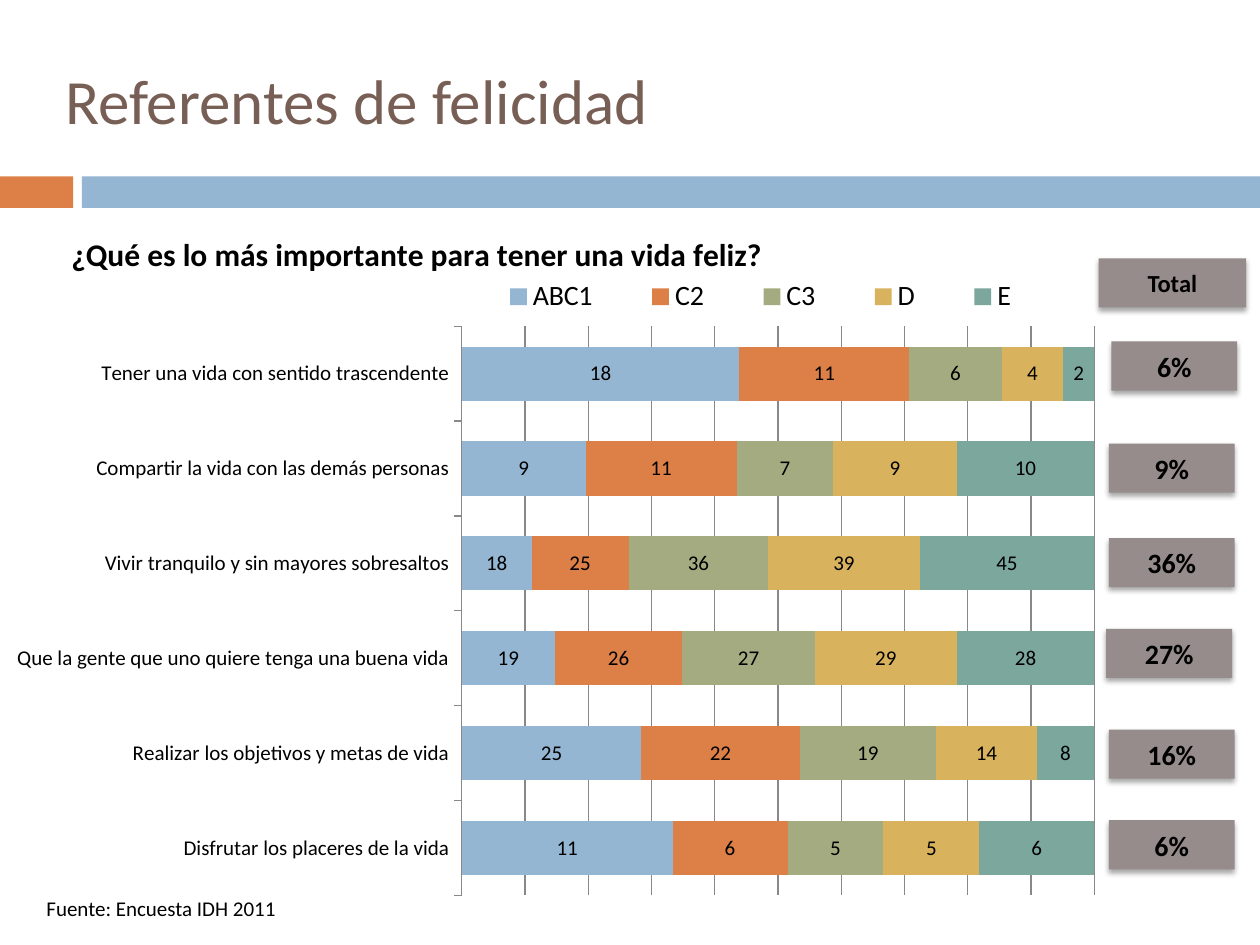
from dataclasses import dataclass

from lxml.etree import SubElement
from pptx import Presentation
from pptx.chart.data import CategoryChartData
from pptx.dml.color import RGBColor
from pptx.enum.chart import XL_CHART_TYPE, XL_LEGEND_POSITION, XL_TICK_MARK
from pptx.enum.shapes import MSO_SHAPE
from pptx.enum.text import MSO_ANCHOR, PP_ALIGN
from pptx.oxml import parse_xml
from pptx.oxml.ns import nsdecls, qn
from pptx.util import Inches, Pt


@dataclass(frozen=True)
class Theme:
    font: str = "Calibri"
    ink: str = "000000"
    brown: str = "775F55"
    grey: str = "968C8C"
    grid: str = "888888"
    blue: str = "94B6D2"
    orange: str = "DD8047"
    green: str = "A5AB81"
    gold: str = "D8B25C"
    teal: str = "7BA79D"
    head: int = 36
    lead: int = 18
    mid: int = 16
    tag: int = 14
    small: int = 12


THEME = Theme()
CATS = [
    "Disfrutar los placeres de la vida",
    "Realizar los objetivos y metas de vida",
    "Que la gente que uno quiere tenga una buena vida",
    "Vivir tranquilo y sin mayores sobresaltos",
    "Compartir la vida con las demás personas",
    "Tener una vida con sentido trascendente",
]
GROUPS = [
    ("ABC1", THEME.blue, (11, 25, 19, 18, 9, 18)),
    ("C2", THEME.orange, (6, 22, 26, 25, 11, 11)),
    ("C3", THEME.green, (5, 19, 27, 36, 7, 6)),
    ("D", THEME.gold, (5, 14, 29, 39, 9, 4)),
    ("E", THEME.teal, (6, 8, 28, 45, 10, 2)),
]
TOTALS = [
    (8.82, 2.71, "6%"),
    (8.8, 3.52, "9%"),
    (8.8, 4.27, "36%"),
    (8.78, 4.99, "27%"),
    (8.8, 5.79, "16%"),
    (8.8, 6.51, "6%"),
]


def place(box):
    return [Inches(side) for side in box]


def style(font, size, color=THEME.ink, bold=False):
    font.name = THEME.font
    font.size = Pt(size)
    font.bold = bold
    font.color.rgb = RGBColor.from_string(color)


def write(frame, text, align=PP_ALIGN.LEFT, **look):
    para = frame.paragraphs[0]
    para.alignment = align
    run = para.add_run()
    run.text = text
    style(run.font, **look)


def block(slide, box, color):
    shape = slide.shapes.add_shape(MSO_SHAPE.RECTANGLE, *place(box))
    shape.shadow.inherit = False
    shape.fill.solid()
    shape.fill.fore_color.rgb = RGBColor.from_string(color)
    shape.line.fill.background()
    return shape


def label(slide, box, text, wrap=True, **look):
    frame = slide.shapes.add_textbox(*place(box)).text_frame
    frame.word_wrap = wrap
    write(frame, text, **look)


def band(slide, box):
    left, top, width, height = box
    start = left + 0.65
    block(slide, (left, top, 0.58, height), THEME.orange)
    block(slide, (start, top, width - start, height), THEME.blue)


def badge(slide, box, text, size):
    shape = block(slide, box, THEME.grey)
    effects = shape.element.spPr.find(qn("a:effectLst"))
    effects.append(parse_xml(
        f'<a:outerShdw {nsdecls("a")} blurRad="{Pt(3)}" dist="{Pt(2)}" '
        'dir="5400000" rotWithShape="0"><a:srgbClr val="000000">'
        '<a:alpha val="35000"/></a:srgbClr></a:outerShdw>'
    ))
    frame = shape.text_frame
    frame.vertical_anchor = MSO_ANCHOR.MIDDLE
    write(frame, text, align=PP_ALIGN.CENTER, size=size, bold=True)


def totals(slide, box):
    badge(slide, box, "Total", THEME.tag)
    for left, top, text in TOTALS:
        badge(slide, (left, top, 1, box[3]), text, THEME.mid)


def arrange(part, index, inner=False, **sides):
    old = part.find(qn("c:layout"))
    if old is not None:
        part.remove(old)
    layout = parse_xml(f'<c:layout {nsdecls("c")}><c:manualLayout/></c:layout>')
    manual = layout[0]
    if inner:
        SubElement(manual, qn("c:layoutTarget")).set("val", "inner")
    for side in "xy":
        SubElement(manual, qn(f"c:{side}Mode")).set("val", "edge")
    for side, value in sides.items():
        SubElement(manual, qn(f"c:{side}")).set("val", str(value))
    part.insert(index, layout)


def bars(slide, box):
    data = CategoryChartData(number_format="0")
    data.categories = CATS
    for name, _, values in GROUPS:
        data.add_series(name, values)
    chart = slide.shapes.add_chart(
        XL_CHART_TYPE.BAR_STACKED_100, *place(box), data
    ).chart
    style(chart.font, THEME.small)

    chart.has_title = True
    title = chart.chart_title
    write(title.text_frame, "¿Qué es lo más importante para tener una vida feliz?",
          size=THEME.lead, bold=True)
    arrange(title.text_frame._txBody.getparent().getparent(), 1, x=0.06, y=0.03)

    chart.has_legend = True
    legend = chart.legend
    legend.position = XL_LEGEND_POSITION.TOP
    legend.include_in_layout = False
    style(legend.font, THEME.mid)
    root = chart.element.find(qn("c:chart"))
    arrange(root.find(qn("c:legend")), 1, x=0.42, y=0.09, w=0.55, h=0.07)
    arrange(root.find(qn("c:plotArea")), 0, inner=True,
            x=0.422, y=0.165, w=0.578, h=0.768)

    plot = chart.plots[0]
    plot.gap_width = 75
    plot.overlap = 100
    plot.vary_by_categories = False
    for series, (_, color, _) in zip(plot.series, GROUPS):
        series.format.fill.solid()
        series.format.fill.fore_color.rgb = RGBColor.from_string(color)
        tags = series.data_labels
        tags.show_value = True
        tags.number_format = "0"
        tags.number_format_is_linked = False
        style(tags.font, THEME.small)

    axis = chart.category_axis
    axis.major_tick_mark = XL_TICK_MARK.OUTSIDE
    style(axis.tick_labels.font, THEME.small)
    scale = chart.value_axis
    scale.visible = False
    scale.has_major_gridlines = True
    for line in (axis.format.line, scale.major_gridlines.format.line):
        line.color.rgb = RGBColor.from_string(THEME.grid)
        line.width = Pt(0.75)


def main():
    deck = Presentation()
    deck.slide_width, deck.slide_height = Inches(10), Inches(7.5)
    slide = deck.slides.add_slide(deck.slide_layouts[6])
    band(slide, (0, 1.4, 10, 0.25))
    totals(slide, (8.72, 2.05, 1.17, 0.39))
    bars(slide, (0, 1.62, 8.69, 5.88))
    label(slide, (0.42, 0.44, 8.92, 1.08), "Referentes de felicidad",
          size=THEME.head, color=THEME.brown)
    label(slide, (0.27, 7.06, 2.09, 0.3), "Fuente: Encuesta IDH 2011",
          wrap=False, size=THEME.small)
    deck.save("out.pptx")


if __name__ == "__main__":
    main()
